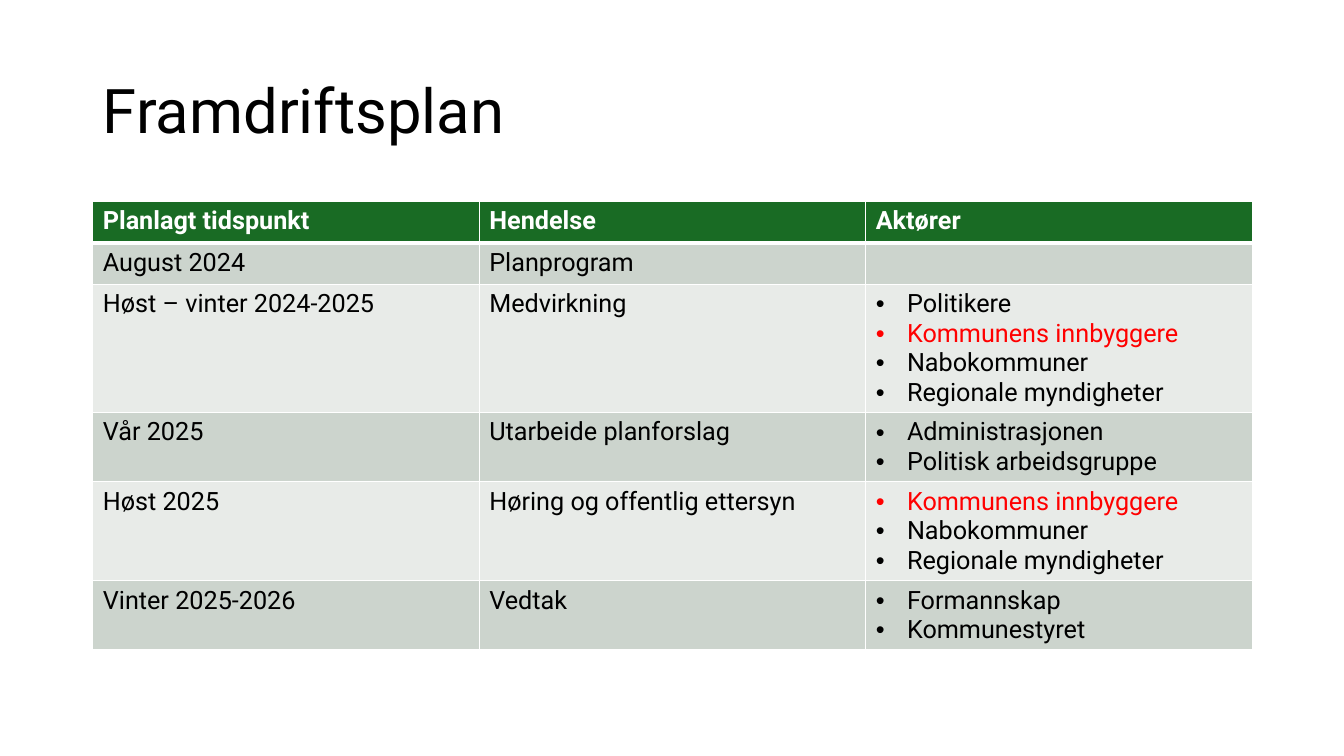
import pptx
import pptx.dml.color
import pptx.enum.text
import pptx.oxml
import pptx.oxml.ns
import pptx.util
from pptx.util import Inches

HEADINGS = ["Planlagt tidspunkt", "Hendelse", "Aktører"]
RESIDENTS = "Kommunens innbyggere"
MILESTONES = [
    ("August 2024", "Planprogram", []),
    ("Høst – vinter 2024-2025", "Medvirkning",
     ["Politikere", RESIDENTS, "Nabokommuner", "Regionale myndigheter"]),
    ("Vår 2025", "Utarbeide planforslag",
     ["Administrasjonen", "Politisk arbeidsgruppe"]),
    ("Høst 2025", "Høring og offentlig ettersyn",
     [RESIDENTS, "Nabokommuner", "Regionale myndigheter"]),
    ("Vinter 2025-2026", "Vedtak", ["Formannskap", "Kommunestyret"]),
]


def rgb(value):
    return pptx.dml.color.RGBColor.from_string(value)


def element(xml):
    """Parse a DrawingML element whose first tag lacks the namespace."""
    tag, rest = xml.split(" ", 1)
    return pptx.oxml.parse_xml(f"{tag} {pptx.oxml.ns.nsdecls('a')} {rest}")


class PlanSlide:
    font_name = "Roboto"
    black, white, red = "000000", "FFFFFF", "FF0000"
    header_fill = "196B24"
    band_fills = ["CCD4CD", "E8EBE8"]
    left, width = 0.92, 11.5
    row_height, line_height, cell_padding = 0.41, 0.29, 0.1

    def __init__(self, presentation):
        self.slide = presentation.slides.add_slide(presentation.slide_layouts[5])

    def add_text(self, paragraph, text, size=18, bold=False, color=black):
        run = paragraph.add_run()
        run.text = text
        style = {"name": self.font_name, "size": pptx.util.Pt(size), "bold": bold}
        for attribute, value in style.items():
            setattr(run.font, attribute, value)
        run.font.color.rgb = rgb(color)

    def title(self, text):
        heading = self.slide.shapes.title
        place = {"left": self.left, "top": 0.4, "width": self.width, "height": 1.45}
        for attribute, value in place.items():
            setattr(heading, attribute, Inches(value))
        frame = heading.text_frame
        frame.auto_size = pptx.enum.text.MSO_AUTO_SIZE.NONE
        frame.vertical_anchor = pptx.enum.text.MSO_ANCHOR.MIDDLE
        paragraph = frame.paragraphs[0]
        paragraph.alignment = pptx.enum.text.PP_ALIGN.LEFT
        paragraph.line_spacing = 0.9
        self.add_text(paragraph, text, size=44)

    def cell(self, cell, fill, top=1, bottom=1):
        """Fill a cell and give it white borders, in points."""
        cell.fill.solid()
        cell.fill.fore_color.rgb = rgb(fill)
        borders = {"L": 1, "R": 1, "T": top, "B": bottom}
        for position, (side, points) in enumerate(borders.items()):
            cell._tc.get_or_add_tcPr().insert(position, element(
                f'<a:ln{side} w="{pptx.util.Pt(points)}"><a:solidFill>'
                f'<a:srgbClr val="{self.white}"/></a:solidFill></a:ln{side}>'))

    def bullets(self, frame, items):
        for number, item in enumerate(items):
            paragraph = frame.add_paragraph() if number else frame.paragraphs[0]
            color = self.red if item == RESIDENTS else self.black
            properties = paragraph._p.get_or_add_pPr()
            indent = Inches(0.31)
            properties.set("marL", str(indent))
            properties.set("indent", str(-indent))
            properties.append(element('<a:buFont typeface="Arial"/>'))
            properties.append(element('<a:buChar char="•"/>'))
            self.add_text(paragraph, item, color=color)

    def schedule(self, headings, milestones):
        heights = [self.row_height] + [
            max(self.row_height, self.cell_padding + self.line_height * len(actors))
            for *_, actors in milestones]
        table = self.slide.shapes.add_table(
            len(heights), len(headings), Inches(self.left), Inches(2),
            Inches(self.width), Inches(sum(heights))).table
        for row, height in zip(table.rows, heights):
            row.height = Inches(height)

        for column, heading in enumerate(headings):
            cell = table.cell(0, column)
            self.cell(cell, self.header_fill, bottom=3)
            self.add_text(cell.text_frame.paragraphs[0], heading,
                          bold=True, color=self.white)

        for number, (time, event, actors) in enumerate(milestones):
            cells = list(table.rows[number + 1].cells)
            for cell in cells:
                self.cell(cell, self.band_fills[number % 2], top=1 if number else 3)
            for cell, text in zip(cells, (time, event)):
                self.add_text(cell.text_frame.paragraphs[0], text)
            self.bullets(cells[2].text_frame, actors)


def main():
    presentation = pptx.Presentation()
    presentation.slide_width = Inches(13.33)
    presentation.slide_height = Inches(7.5)
    plan = PlanSlide(presentation)
    plan.title("Framdriftsplan")
    plan.schedule(HEADINGS, MILESTONES)
    presentation.save("out.pptx")


if __name__ == "__main__":
    main()
